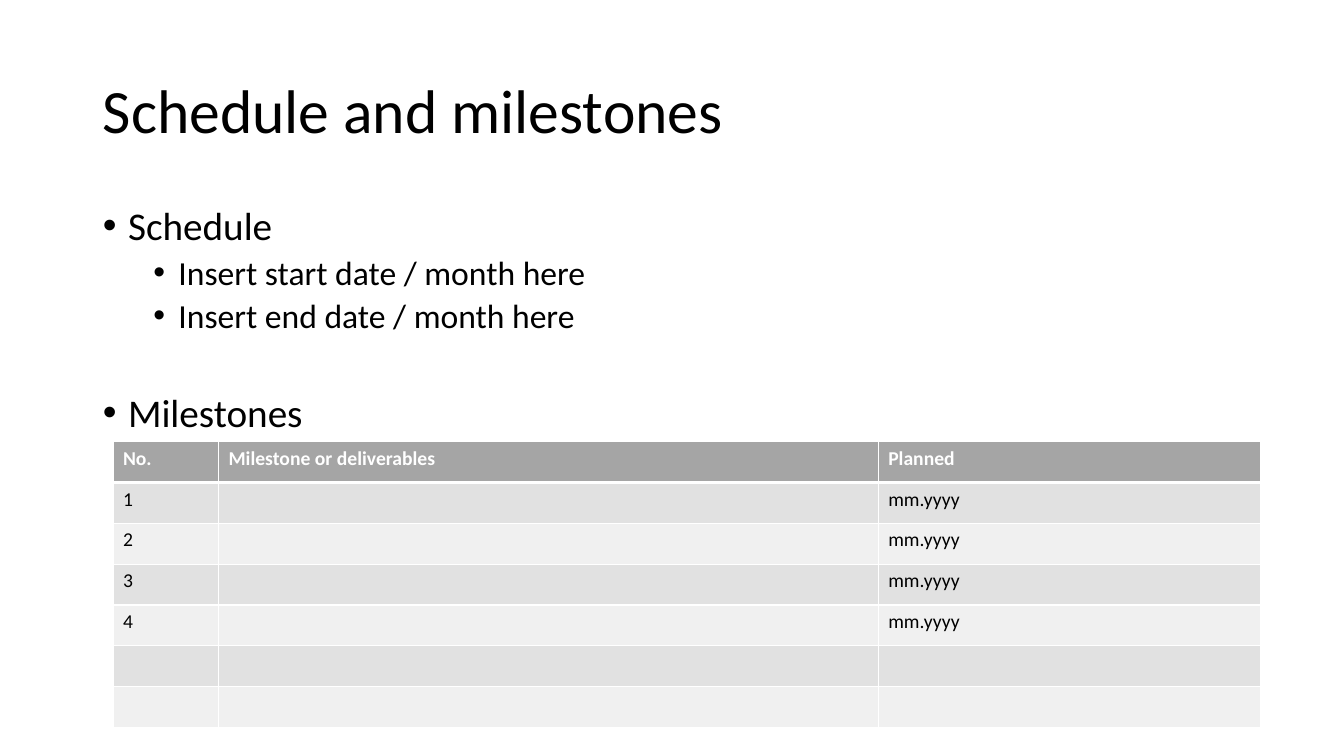
from lxml import etree
from pptx import Presentation
from pptx.dml.color import RGBColor
from pptx.enum.text import MSO_ANCHOR, MSO_AUTO_SIZE, PP_ALIGN
from pptx.oxml.ns import qn
from pptx.util import Inches, Pt

LEFT = PP_ALIGN.LEFT
TOP = MSO_ANCHOR.TOP
MIDDLE = MSO_ANCHOR.MIDDLE
NO_FIT = MSO_AUTO_SIZE.NONE

FONT = "Calibri"
BLACK, WHITE = "000000", "FFFFFF"
HEADER_FILL = "A5A5A5"
BAND_FILLS = ["F0F0F0", "E1E1E1"]

TITLE_BOX = (0.92, 0.4, 11.5, 1.45)
BODY_BOX = (0.92, 2, 11.5, 4.76)
TABLE_BOX = (1.12, 4.38, 11.38, 2.84)

BULLETS = [
    (0, "Schedule", 6),
    (1, "Insert start date / month here", 5),
    (1, "Insert end date / month here", 5),
    (0, "Milestones", 41.4),
]
LEVEL_SIZES = [28, 24]
LEVEL_INDENTS = [0.25, 0.75]
HANGING = 0.25

COLUMN_SHARES = [0.092, 0.575, 0.333]
HEADINGS = ["No.", "Milestone or deliverables", "Planned"]
MILESTONES = [[str(number), "", "mm.yyyy"] for number in range(1, 5)]
SPARE_ROWS = [["", "", ""]] * 2


def color(value):
    return RGBColor.from_string(value)


def format_runs(paragraph, size, font_color, bold=False):
    for run in paragraph.runs:
        run.font.name = FONT
        run.font.size = Pt(size)
        run.font.bold = bold
        run.font.color.rgb = color(font_color)


def place(shape, box, anchor):
    shape.left, shape.top, shape.width, shape.height = map(Inches, box)
    shape.text_frame.word_wrap = True
    shape.text_frame.auto_size = NO_FIT
    shape.text_frame.vertical_anchor = anchor


def add_title(slide, box):
    title = slide.shapes.title
    place(title, box, MIDDLE)
    title.text_frame.text = "Schedule and milestones"
    paragraph = title.text_frame.paragraphs[0]
    paragraph.alignment = LEFT
    paragraph.line_spacing = 0.9
    format_runs(paragraph, 44, BLACK)


def set_bullet(paragraph, indent):
    properties = paragraph._p.get_or_add_pPr()
    properties.set("marL", str(Inches(indent)))
    properties.set("indent", str(-Inches(HANGING)))
    etree.SubElement(properties, qn("a:buFont"), typeface="Arial")
    etree.SubElement(properties, qn("a:buChar"), char="•")


def add_bullets(slide, box):
    body = slide.placeholders[1]
    place(body, box, TOP)
    body.text_frame.text = "\n".join(text for _, text, _ in BULLETS)
    for paragraph, (level, _, space) in zip(body.text_frame.paragraphs, BULLETS):
        paragraph.level = level
        paragraph.line_spacing = 0.9
        paragraph.space_before = Pt(space)
        set_bullet(paragraph, LEVEL_INDENTS[level])
        format_runs(paragraph, LEVEL_SIZES[level], BLACK)


def set_borders(cell, top, bottom):
    properties = cell._tc.get_or_add_tcPr()
    widths = {"a:lnL": 1, "a:lnR": 1, "a:lnT": top, "a:lnB": bottom}
    for position, (tag, width) in enumerate(widths.items()):
        line = etree.Element(qn(tag), w=str(Pt(width)))
        fill = etree.SubElement(line, qn("a:solidFill"))
        etree.SubElement(fill, qn("a:srgbClr"), val=WHITE)
        properties.insert(position, line)


def fill_cell(cell, text, row_index):
    is_header = row_index == 0
    cell.text_frame.text = text
    format_runs(cell.text_frame.paragraphs[0], 14,
                WHITE if is_header else BLACK, is_header)
    cell.fill.solid()
    cell.fill.fore_color.rgb = color(
        HEADER_FILL if is_header else BAND_FILLS[row_index % 2])
    set_borders(cell, 3 if row_index == 1 else 1, 3 if is_header else 1)


def add_milestone_table(slide, box):
    rows = [HEADINGS] + MILESTONES + SPARE_ROWS
    left, top, width, height = map(Inches, box)
    table = slide.shapes.add_table(
        len(rows), len(HEADINGS), left, top, width, height).table
    for column, share in zip(table.columns, COLUMN_SHARES):
        column.width = int(width * share)
    for row_index, texts in enumerate(rows):
        for column_index, text in enumerate(texts):
            fill_cell(table.cell(row_index, column_index), text, row_index)


def main():
    presentation = Presentation()
    presentation.slide_width = Inches(13.33)
    presentation.slide_height = Inches(7.5)
    slide = presentation.slides.add_slide(presentation.slide_layouts[1])
    add_title(slide, TITLE_BOX)
    add_bullets(slide, BODY_BOX)
    add_milestone_table(slide, TABLE_BOX)
    presentation.save("out.pptx")


if __name__ == "__main__":
    main()
